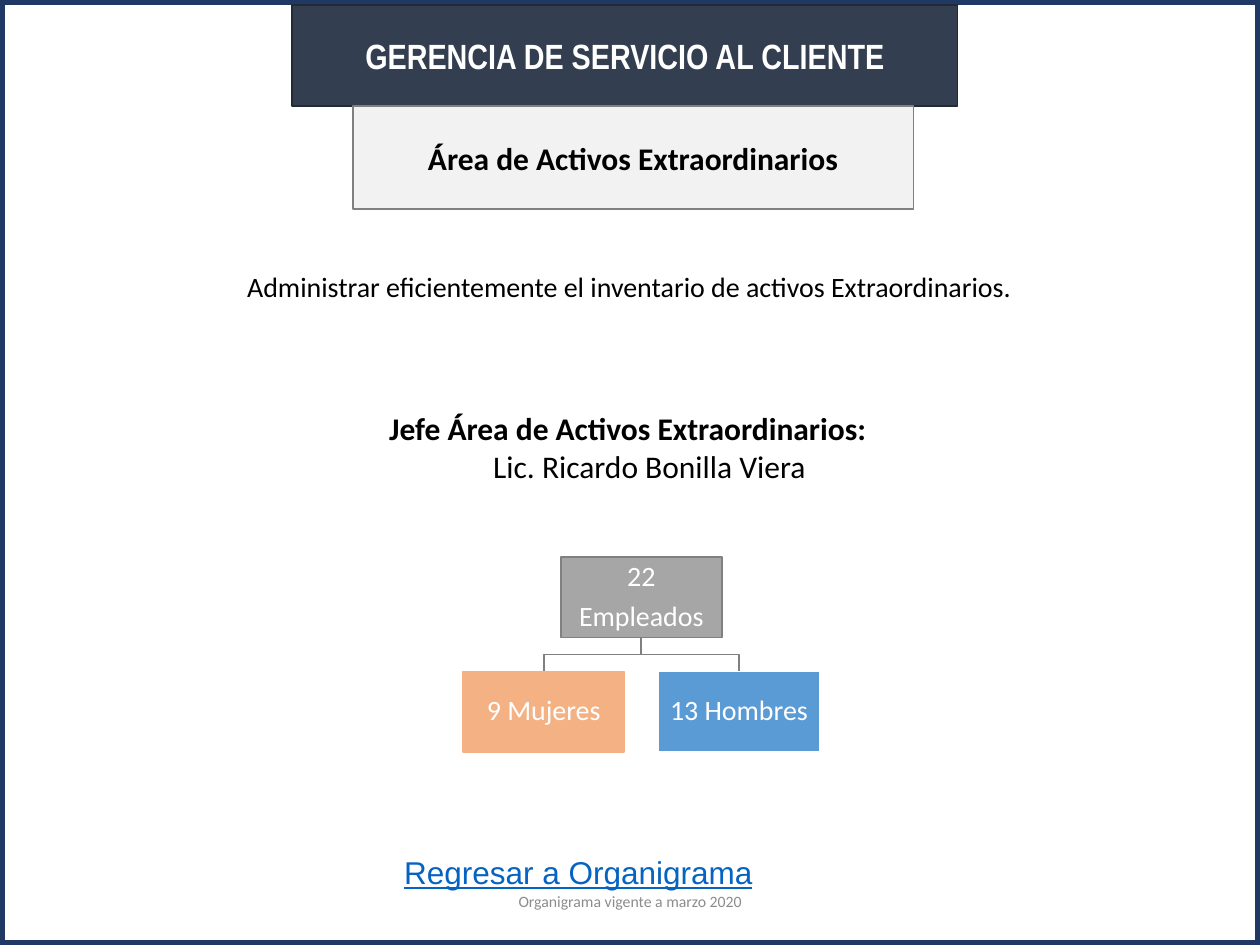
"""Build the staff slide of the Área de Activos Extraordinarios."""
import pptx
import pptx.dml.color
import pptx.enum.shapes
import pptx.enum.text
import pptx.util

RGB = pptx.dml.color.RGBColor
WHITE, BLACK = RGB(0xFF, 0xFF, 0xFF), RGB(0, 0, 0)
NAVY, SLATE, INK = RGB(0x20, 0x38, 0x64), RGB(0x33, 0x3F, 0x50), RGB(0x22, 0x2A, 0x35)
PALE, GREY, SILVER = RGB(0xF2, 0xF2, 0xF2), RGB(0x80, 0x80, 0x80), RGB(0xA6, 0xA6, 0xA6)
PEACH, BLUE = RGB(0xF4, 0xB1, 0x83), RGB(0x5B, 0x9B, 0xD5)
LINK, NOTE = RGB(0x05, 0x63, 0xC1), RGB(0x8C, 0x8C, 0x8C)
ALIGN, ANCHOR = pptx.enum.text.PP_ALIGN, pptx.enum.text.MSO_ANCHOR

prs = pptx.Presentation()
prs.slide_width, prs.slide_height = pptx.util.Inches(10), pptx.util.Inches(7.5)
COL, ROW = prs.slide_width / 100, prs.slide_height / 75
s = prs.slides.add_slide(prs.slide_layouts[6])


def add_box(col, row, cols, rows, fill=None, line=None, weight=1):
    """Add a rectangle, or a text box when it has no line."""
    at = [int(v) for v in (col * COL, row * ROW, cols * COL, rows * ROW)]
    if line is None:
        sp = s.shapes.add_textbox(*at)
    else:
        sp = s.shapes.add_shape(pptx.enum.shapes.MSO_SHAPE.RECTANGLE, *at)
        sp.shadow.inherit = False
        sp.line.color.rgb = line
        sp.line.width = pptx.util.Pt(weight)
        if fill is None:
            sp.fill.background()
        else:
            sp.fill.solid()
            sp.fill.fore_color.rgb = fill
    sp.text_frame.word_wrap = True
    return sp


def write(sp, lines, size, color, font="Calibri", bold=False, align=ALIGN.CENTER, anchor=ANCHOR.MIDDLE):
    """Fill a shape with one paragraph per line and return the paragraphs."""
    tf = sp.text_frame
    tf.vertical_anchor = anchor
    tf.text = "\n".join(lines)
    for p in tf.paragraphs:
        p.alignment = align
        p.font.name, p.font.size, p.font.bold = font, pptx.util.Pt(size), bold
        p.font.color.rgb = color
    return tf.paragraphs


add_box(0, 0, 100, 75, line=NAVY, weight=6)

sp = add_box(31.1, 67.2, 32.7, 4)
p = write(sp, ["Regresar a Organigrama"], 18, LINK, "Arial", align=ALIGN.LEFT, anchor=ANCHOR.TOP)[0]
p.font.underline = True

sp = add_box(23.2, 0.4, 52.8, 8, SLATE, INK)
write(sp, ["GERENCIA DE SERVICIO AL CLIENTE"], 20, WHITE, "Arial Narrow", True)
sp = add_box(28, 8.4, 44.5, 8.2, PALE, GREY)
write(sp, ["Área de Activos Extraordinarios"], 18, BLACK, bold=True)

sp = add_box(10.6, 20.9, 78.7, 3.7)
write(sp, ["Administrar eficientemente el inventario de activos Extraordinarios."], 16, BLACK, anchor=ANCHOR.TOP)

sp = add_box(29.9, 32, 40.6, 7.1)
title, name = write(sp, ["Jefe Área de Activos Extraordinarios:", "Lic. Ricardo Bonilla Viera"],
                    18, BLACK, anchor=ANCHOR.TOP)
title.alignment, title.font.bold = ALIGN.LEFT, True
name._p.get_or_add_pPr().set("marL", str(int(2.7 * COL)))

NODE_W, NODE_H, GAP = 12.8, 6.4, 2.7
MID, TOP = 50.9, 44.2
BOTTOM = TOP + NODE_H
SPREAD = 7.75

for x in (MID + SPREAD, MID - SPREAD):
    fb = s.shapes.build_freeform(int(MID * COL), int(BOTTOM * ROW))
    bend = BOTTOM + GAP / 2
    points = [(MID, bend), (x, bend), (x, BOTTOM + GAP)]
    fb.add_line_segments([(int(c * COL), int(r * ROW)) for c, r in points], close=False)
    sp = fb.convert_to_shape()
    sp.shadow.inherit = False
    sp.fill.background()
    sp.line.color.rgb = GREY
    sp.line.width = pptx.util.Pt(1)

for x, row, lines, fill, line in (
    (MID, TOP, ["22", "Empleados"], SILVER, GREY),
    (MID - SPREAD, BOTTOM + GAP, ["9 Mujeres"], PEACH, PEACH),
    (MID + SPREAD, BOTTOM + GAP, ["13 Hombres"], BLUE, WHITE),
):
    sp = add_box(x - NODE_W / 2, row, NODE_W, NODE_H, fill, line)
    tf = sp.text_frame
    tf.margin_left = tf.margin_right = tf.margin_top = tf.margin_bottom = pptx.util.Inches(0.01)
    for p in write(sp, lines, 16, WHITE):
        p.line_spacing = 0.9
        p.space_after = pptx.util.Pt(5.6)

sp = add_box(33.1, 69.5, 33.8, 4)
write(sp, ["Organigrama vigente a marzo 2020"], 9, NOTE)

prs.save("out.pptx")
